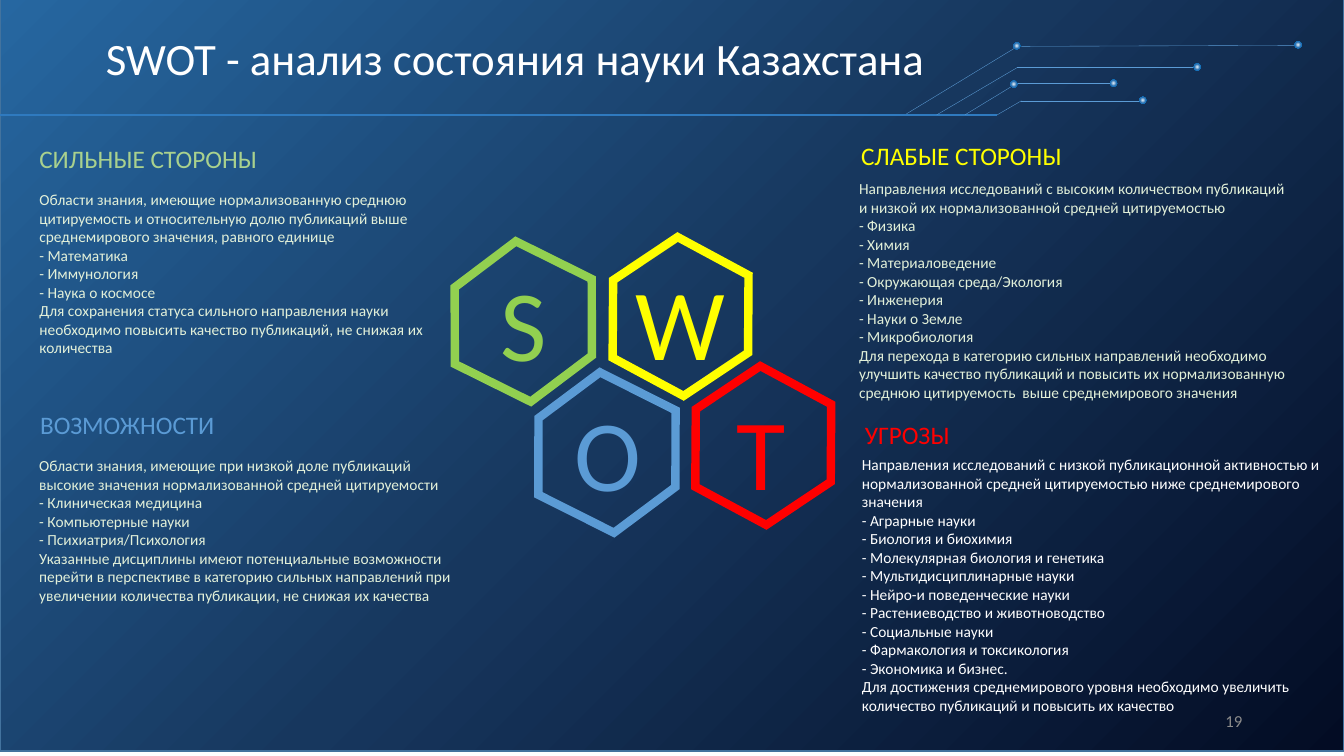
import pptx
import pptx.dml.color
import pptx.enum.shapes
import pptx.enum.text
import pptx.oxml
import pptx.oxml.ns
import pptx.util
import lxml.etree

Inches = pptx.util.Inches
Pt = pptx.util.Pt
Shape = pptx.enum.shapes.MSO_SHAPE
Align = pptx.enum.text.PP_ALIGN
Anchor = pptx.enum.text.MSO_ANCHOR
AutoSize = pptx.enum.text.MSO_AUTO_SIZE
qn = pptx.oxml.ns.qn

COLORS = {
    "white": "FFFFFF", "mint": "E2F0D9", "sage": "A9D18E", "green": "92D050",
    "yellow": "FFFF00", "blue": "5B9BD5", "red": "FF0000", "gray": "8C8C8C",
    "rule": "2F7ABF", "border": "43739E",
    "night": "030C24", "navy": "17375E", "azure": "2667A1",
    "glow": "DEEBF7", "steel": "2E75B6", "ocean": "0070C0",
}


class SwotSlide:
    """Holds the style and the current slide."""

    font_name = "Calibri"

    def __init__(self, deck):
        self.slide = deck.slides.add_slide(deck.slide_layouts.get_by_name("Comparison"))
        self.shapes = self.slide.shapes

    def rgb(self, color):
        return pptx.dml.color.RGBColor.from_string(COLORS[color])

    def apply(self, target, values):
        for name, value in values.items():
            setattr(target, name, value)

    def place(self, element, box):
        self.apply(element, dict(zip(("left", "top", "width", "height"), map(Inches, box))))

    def fill_text(self, element, lines, size, color, paragraph_format=None, frame_format=None):
        frame = element.text_frame
        frame.text = "\n".join(lines)
        self.apply(frame, {"word_wrap": True, "auto_size": AutoSize.NONE,
                           "vertical_anchor": Anchor.TOP, **(frame_format or {})})
        for paragraph in frame.paragraphs:
            self.apply(paragraph, {"alignment": Align.LEFT, "line_spacing": 1.0,
                                   "space_before": Pt(0), **(paragraph_format or {})})
            for run in paragraph.runs:
                self.apply(run.font, {"name": self.font_name, "size": Pt(size), "bold": False})
                run.font.color.rgb = self.rgb(color)

    def placeholder(self, index, box, lines, size, color, **formats):
        holder = self.slide.placeholders[index]
        self.place(holder, box)
        self.fill_text(holder, lines, size, color, **formats)
        # Plain lines without bullets or hanging indent
        for paragraph in holder.text_frame.paragraphs:
            properties = paragraph._p.get_or_add_pPr()
            properties.set("marL", "0")
            properties.set("indent", "0")
            lxml.etree.SubElement(properties, qn("a:buNone"))

    def textbox(self, box, lines, size, color, **formats):
        self.fill_text(self.shapes.add_textbox(*map(Inches, box)), lines, size, color, **formats)

    def preset(self, kind, box, line=None, width=1):
        shape = self.shapes.add_shape(kind, *map(Inches, box))
        shape.shadow.inherit = False
        if line:
            shape.line.color.rgb = self.rgb(line)
            shape.line.width = Pt(width)
        else:
            shape.line.fill.background()
        return shape

    def radial_fill(self, shape, colors, focus):
        shape.fill.gradient()
        gradient = shape._element.spPr.find(qn("a:gradFill"))
        for child in list(gradient):
            gradient.remove(child)
        stops = lxml.etree.SubElement(gradient, qn("a:gsLst"))
        for position, color in zip((0, 50000, 100000), colors):
            stop = lxml.etree.SubElement(stops, qn("a:gs"), pos=str(position))
            lxml.etree.SubElement(stop, qn("a:srgbClr"), val=COLORS[color])
        circle = lxml.etree.SubElement(gradient, qn("a:path"), {"path": "circle"})
        edges = {side: str(share * 1000) for side, share in zip("ltrb", focus)}
        lxml.etree.SubElement(circle, qn("a:fillToRect"), edges)

    def background(self):
        backdrop = self.preset(Shape.RECTANGLE, (0, -0.05, 13.33, 7.5), "border")
        self.radial_fill(backdrop, ("night", "navy", "azure"), (100, 100, 0, 0))
        self.shapes._spTree.insert(2, backdrop._element)

    def trace(self, points, color="blue", width=0.25):
        for start, end in zip(points, points[1:]):
            connector = self.shapes.add_connector(
                pptx.enum.shapes.MSO_CONNECTOR.STRAIGHT, *map(Inches, start + end))
            connector.line.color.rgb = self.rgb(color)
            connector.line.width = Pt(width)
            lxml.etree.SubElement(connector._element.spPr, qn("a:effectLst"))

    def node(self, left, top):
        dot = self.preset(Shape.OVAL, (left, top, 0.07, 0.07))
        self.radial_fill(dot, ("glow", "steel", "ocean"), (50, 50, 50, 50))

    def hexagon(self, left, top, rotation, adjustment, color):
        cell = self.preset(Shape.HEXAGON, (left, top, 1.52, 1.36), color, 6)
        cell.fill.background()
        cell.rotation = rotation
        cell.adjustments[0] = adjustment
        lxml.etree.SubElement(cell.line._get_or_add_ln(), qn("a:miter"), lim="800000")


HEADING = {"alignment": Align.JUSTIFY, "line_spacing": 1.15, "space_after": Pt(10)}

# Quadrants: placeholder, box, lines, size, colour, paragraph format
QUADRANTS = [
    (1, (0.29, 1.33, 2.44, 0.43), ["СИЛЬНЫЕ СТОРОНЫ "], 18, "sage", HEADING),
    (2, (0.29, 1.84, 4.21, 1.77), [
        "Области знания, имеющие нормализованную среднюю цитируемость и относительную долю "
        "публикаций выше среднемирового значения, равного единице",
        "- Математика", "- Иммунология", "- Наука о космосе",
        "Для сохранения статуса сильного направления науки необходимо повысить качество "
        "публикаций, не снижая их количества"], 11, "mint", {}),
    (3, (8.44, 1.3, 2.27, 0.43), ["СЛАБЫЕ СТОРОНЫ "], 18, "yellow", HEADING),
    (4, (8.42, 1.73, 4.49, 2.32), [
        "Направления исследований с высоким количеством публикаций и низкой их "
        "нормализованной средней цитируемостью",
        "- Физика", "- Химия", "- Материаловедение", "- Окружающая среда/Экология",
        "- Инженерия", "- Науки о Земле", "- Микробиология",
        "Для перехода в категорию сильных направлений необходимо улучшить качество публикаций "
        "и повысить их нормализованную среднюю цитируемость  выше среднемирового значения"],
     11, "mint", {}),
    (None, (0.3, 3.97, 1.94, 0.43), ["ВОЗМОЖНОСТИ"], 18, "blue", HEADING),
    (None, (0.29, 4.48, 4.35, 1.95), [
        "Области знания, имеющие при низкой доле публикаций высокие значения "
        "нормализованной средней цитируемости",
        "- Клиническая медицина", "- Компьютерные науки", "- Психиатрия/Психология",
        "Указанные дисциплины имеют потенциальные возможности перейти в перспективе в "
        "категорию сильных направлений при увеличении количества публикации, не снижая "
        "их качества"], 11, "mint", {}),
    (None, (8.48, 4.11, 1.05, 0.4), ["УГРОЗЫ"], 18, "red", {}),
    (None, (8.45, 4.47, 4.9, 2.69), [
        "Направления исследований с низкой публикационной активностью и нормализованной "
        "средней цитируемостью ниже среднемирового значения",
        "- Аграрные науки", "- Биология и биохимия", "- Молекулярная биология и генетика",
        "- Мультидисциплинарные науки", "- Нейро-и поведенческие науки",
        "- Растениеводство и животноводство", "- Социальные науки",
        "- Фармакология и токсикология", "- Экономика и бизнес.",
        "Для достижения среднемирового уровня необходимо увеличить количество публикаций "
        "и повысить их качество"], 11, "white", {}),
]

# Letters: text box, then hexagon position, rotation and adjustment
LETTERS = [
    ("S", "green", (4.87, 2.54, 0.67, 1.31), (4.43, 2.51, 26.4, 0.25)),
    ("W", "yellow", (6.21, 2.53, 1.1, 1.31), (5.99, 2.46, 28.3, 0.265)),
    ("O", "blue", (5.6, 3.83, 0.87, 1.31), (5.26, 3.81, 26.7, 0.25)),
    ("T", "red", (7.21, 3.82, 0.69, 1.31), (6.81, 3.74, 28.3, 0.265)),
]

TRACES = [
    [(8.99, 1.13), (10.06, 0.48)], [(10.13, 0.46), (12.86, 0.45)],
    [(9.29, 1.14), (10.09, 0.67), (11.87, 0.67)],
    [(9.57, 1.14), (10.03, 0.86)], [(10.09, 0.83), (11.05, 0.83)],
    [(9.89, 1.14), (10.13, 1), (11.3, 1)],
]
NODES = [(10.05, 0.42), (12.84, 0.41), (11.84, 0.63), (10.02, 0.8), (11.01, 0.79), (11.3, 0.96)]


def main():
    deck = pptx.Presentation()
    deck.slide_width, deck.slide_height = Inches(13.33), Inches(7.5)
    swot = SwotSlide(deck)

    # Backdrop and title
    swot.background()
    swot.placeholder(0, (0.95, 0.27, 11.5, 0.67), ["SWOT - анализ состояния науки Казахстана"],
                     32, "white", paragraph_format={"line_spacing": 0.9},
                     frame_format={"vertical_anchor": Anchor.MIDDLE})

    # Circuit under the title
    swot.trace([(0, 1.14), (9.89, 1.14)], "rule", 1)
    for points in TRACES:
        swot.trace(points)
    for position in NODES:
        swot.node(*position)

    # Four quadrants of text
    for index, box, lines, size, color, style in QUADRANTS:
        formats = {"paragraph_format": style, "frame_format": {"word_wrap": len(lines) > 1}}
        if index:
            swot.placeholder(index, box, lines, size, color, **formats)
        else:
            swot.textbox(box, lines, size, color, **formats)

    # Hexagons with letters
    for letter, color, box, cell in LETTERS:
        swot.hexagon(*cell, color)
        swot.textbox(box, [letter], 72, color, frame_format={"word_wrap": False})

    # Slide number
    swot.textbox((9.42, 6.95, 3, 0.4), ["19"], 12, "gray",
                 paragraph_format={"alignment": Align.RIGHT},
                 frame_format={"vertical_anchor": Anchor.MIDDLE})
    deck.save("out.pptx")


if __name__ == "__main__":
    main()
